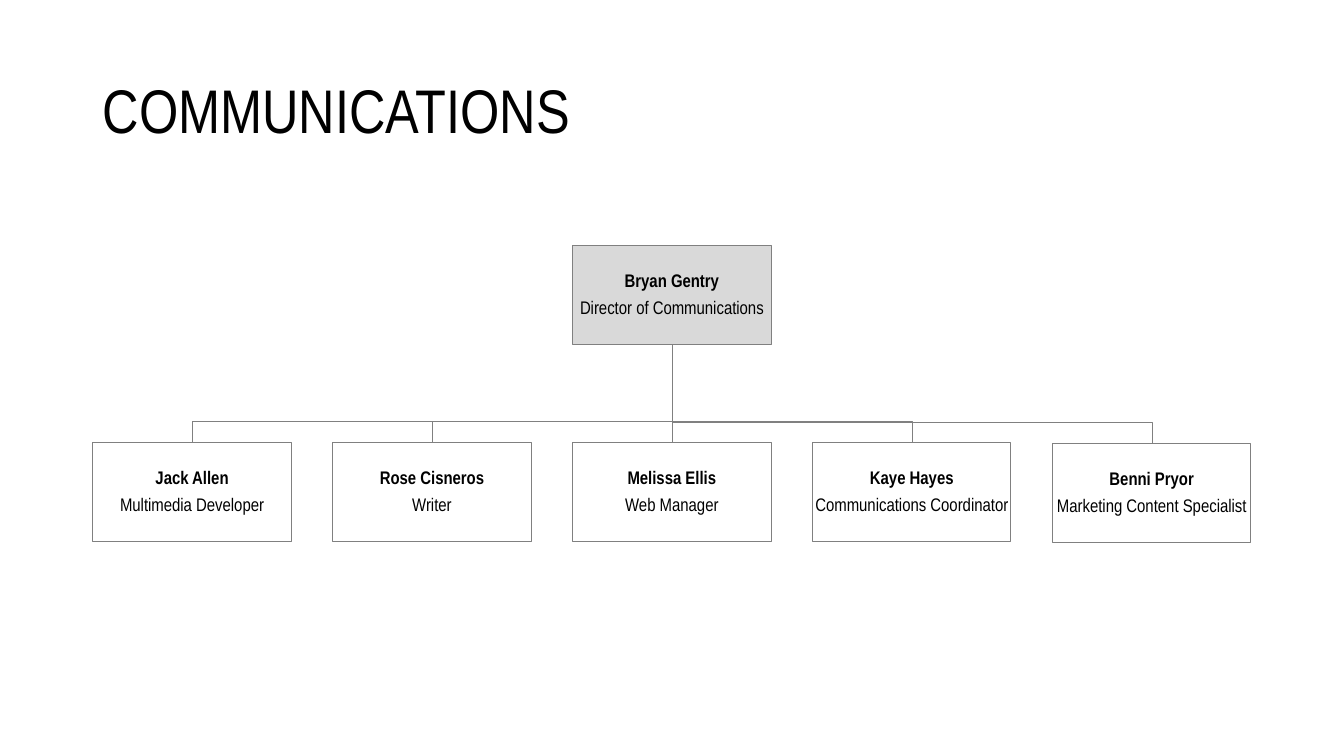
from lxml.etree import SubElement
from pptx import Presentation
from pptx.dml.color import RGBColor
from pptx.enum.shapes import MSO_CONNECTOR, MSO_SHAPE
from pptx.enum.text import MSO_ANCHOR, PP_ALIGN
from pptx.oxml.ns import qn
from pptx.util import Inches, Pt

PX = Inches(0.01)
THEME = {
    "font": "Arial Narrow",
    "title_size": Pt(44),
    "box_size": Pt(13),
    "text": RGBColor.from_string("000000"),
    "line": RGBColor.from_string("808080"),
    "lead_fill": RGBColor.from_string("D9D9D9"),
    "member_fill": RGBColor.from_string("FFFFFF"),
    "line_width": Pt(0.75),
}
BOX_WIDTH, BOX_HEIGHT = 197, 98
FIRST_LEFT, PITCH = 92, 238
LEAD_LEFT, LEAD_TOP = 568, 244
CENTRE = LEAD_LEFT + BOX_WIDTH // 2 + 1
LEAD_BOTTOM = LEAD_TOP + BOX_HEIGHT
BRANCH_RISE = 21

# Name, role and top of each box in the lower row
MEMBERS = [
    ("Jack Allen", "Multimedia Developer", 439),
    ("Rose Cisneros", "Writer", 439),
    ("Melissa Ellis", "Web Manager", 439),
    ("Kaye Hayes", "Communications Coordinator", 439),
    ("Benni Pryor", "Marketing Content Specialist", 440),
]


def write_lines(shape, lines, size, paragraph_format, frame_format):
    text_frame = shape.text_frame
    for name, value in frame_format.items():
        setattr(text_frame, name, value)
    for index, (text, bold) in enumerate(lines):
        paragraph = text_frame.paragraphs[0] if index == 0 else text_frame.add_paragraph()
        paragraph.text = text
        for name, value in paragraph_format.items():
            setattr(paragraph, name, value)
        for name, value in {"name": THEME["font"], "size": size, "bold": bold}.items():
            setattr(paragraph.font, name, value)
        paragraph.font.color.rgb = THEME["text"]


def set_line(shape):
    shape.line.color.rgb = THEME["line"]
    shape.line.width = THEME["line_width"]


presentation = Presentation()
presentation.slide_width = Inches(13.333)
presentation.slide_height = Inches(7.5)
slide = presentation.slides.add_slide(presentation.slide_layouts[6])

# Title
title = slide.shapes.add_textbox(92 * PX, 40 * PX, 1150 * PX, 145 * PX)
write_lines(title, [("COMMUNICATIONS", False)], THEME["title_size"],
            {"line_spacing": 0.9},
            {"word_wrap": True, "vertical_anchor": MSO_ANCHOR.MIDDLE})

# Branches from the director to each member
for index, (name, role, top) in reversed(list(enumerate(MEMBERS))):
    member_centre = CENTRE + (index - 2) * PITCH
    if member_centre == CENTRE:
        branch = slide.shapes.add_connector(
            MSO_CONNECTOR.STRAIGHT, CENTRE * PX, LEAD_BOTTOM * PX, CENTRE * PX, top * PX)
        SubElement(branch._element.spPr, qn("a:effectLst"))
    else:
        builder = slide.shapes.build_freeform(CENTRE, LEAD_BOTTOM, scale=PX)
        bend = top - BRANCH_RISE
        builder.add_line_segments(
            [(CENTRE, bend), (member_centre, bend), (member_centre, top)], close=False)
        branch = builder.convert_to_shape()
        branch.fill.background()
        branch.shadow.inherit = False
    set_line(branch)

# Director and member boxes
boxes = [("Bryan Gentry", "Director of Communications", LEAD_LEFT, LEAD_TOP, THEME["lead_fill"])]
for index, (name, role, top) in enumerate(MEMBERS):
    boxes.append((name, role, FIRST_LEFT + index * PITCH, top, THEME["member_fill"]))

for name, role, left, top, fill in boxes:
    box = slide.shapes.add_shape(
        MSO_SHAPE.RECTANGLE, left * PX, top * PX, BOX_WIDTH * PX, BOX_HEIGHT * PX)
    box.shadow.inherit = False
    box.fill.solid()
    box.fill.fore_color.rgb = fill
    set_line(box)
    write_lines(box, [(name, True), (role, False)], THEME["box_size"],
                {"alignment": PP_ALIGN.CENTER, "line_spacing": 0.9, "space_after": Pt(5)},
                {"word_wrap": True, "vertical_anchor": MSO_ANCHOR.MIDDLE,
                 "margin_left": PX, "margin_right": PX,
                 "margin_top": PX, "margin_bottom": PX})

presentation.save("out.pptx")
